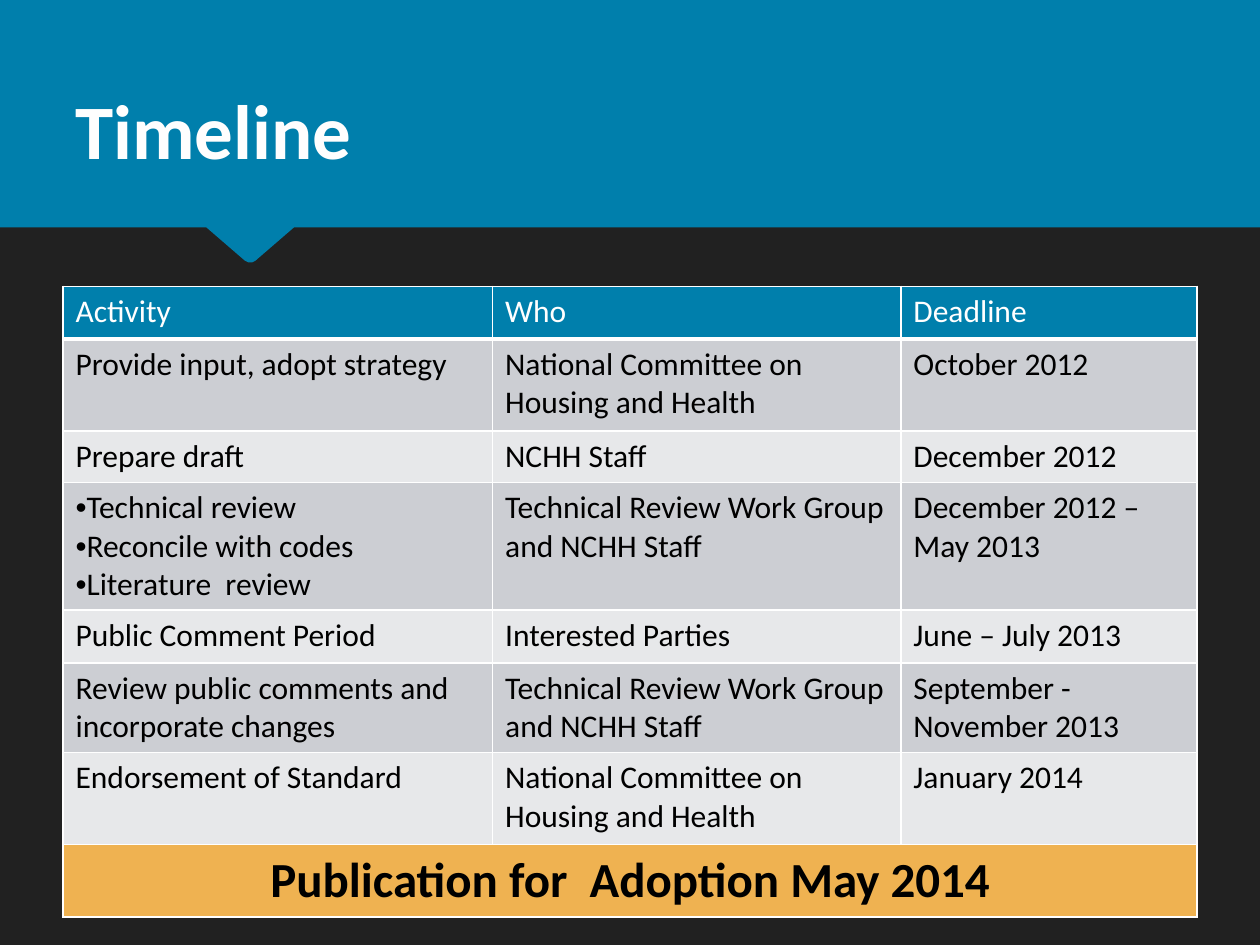
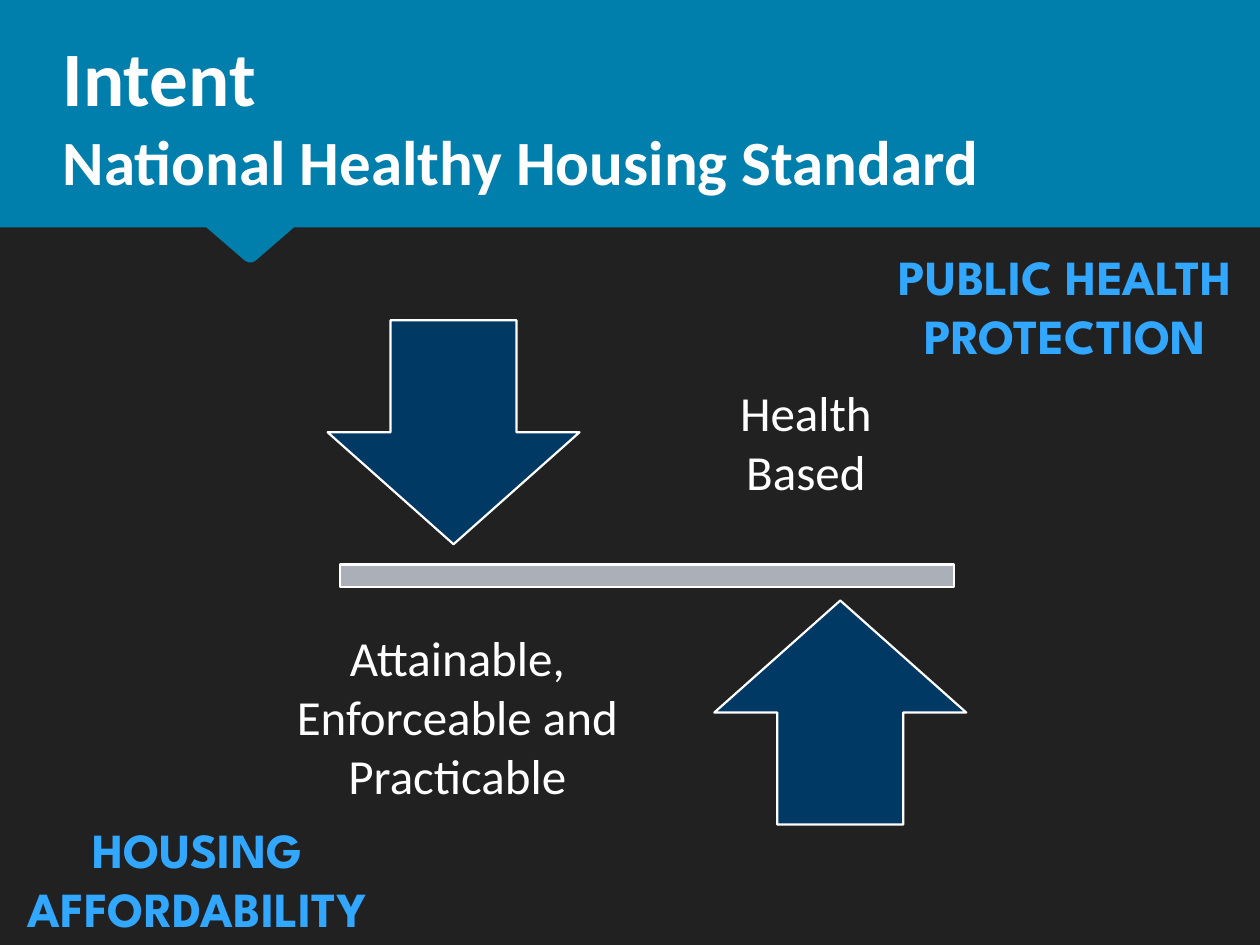
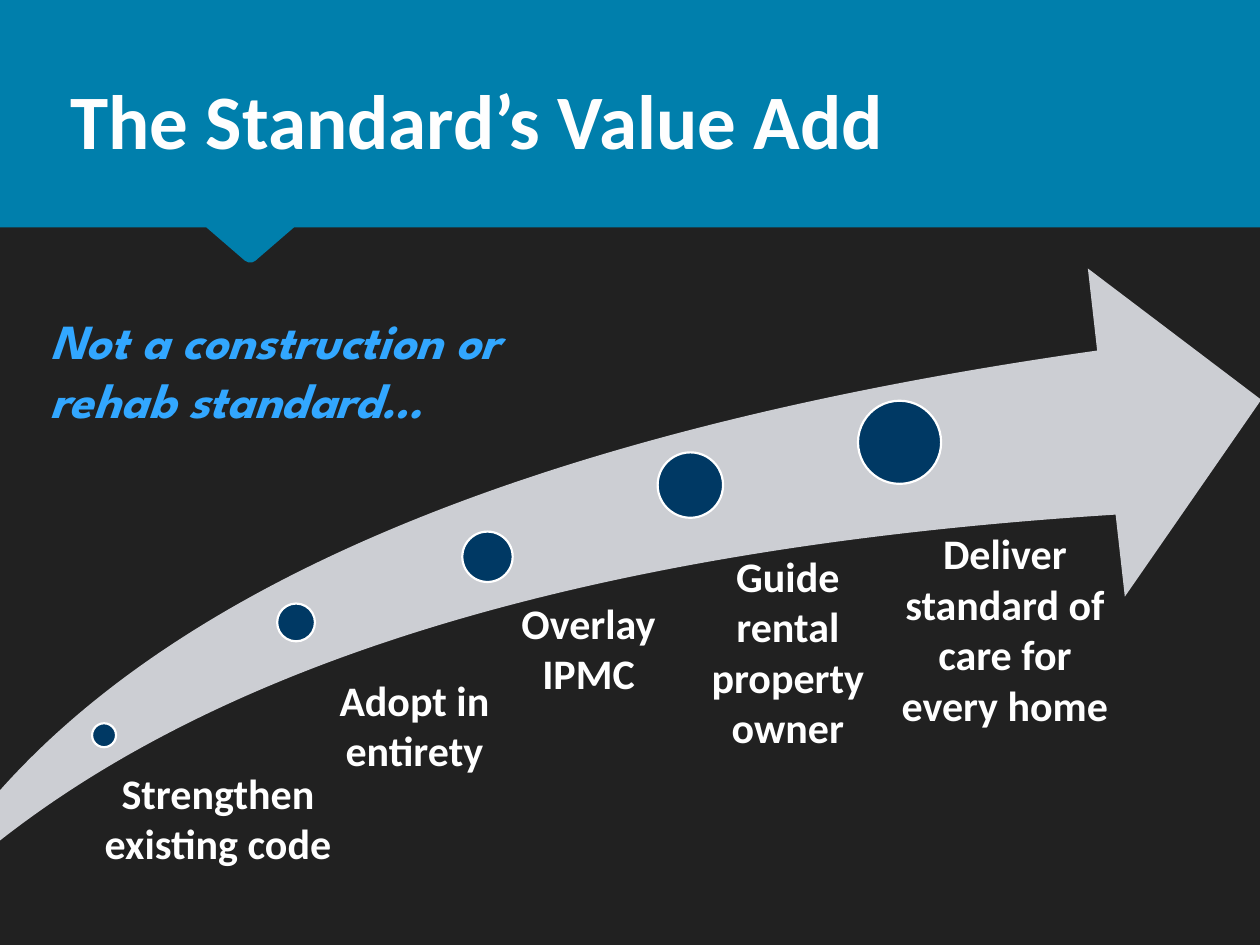
from typing import NamedTuple

from lxml import etree
from pptx import Presentation
from pptx.dml.color import RGBColor
from pptx.enum import shapes, text
from pptx.oxml import ns
from pptx.util import Pt

HUES = {
    "back": "212121", "band": "007FAC", "title": "FEFEFE", "white": "FFFFFF",
    "black": "000000", "navy": "003964", "bar": "ABAFB8", "sky": "32A7FF",
    "dark": "CCCED3", "light": "E7E8EA", "gold": "EFB251",
}
BODY, LOUD = "Calibri", "League Spartan"
FORM, ALIGN, ANCHOR = shapes.MSO_SHAPE, text.PP_ALIGN, text.MSO_ANCHOR
WIDE, HIGH, EDGE = 720, 540, 129.6


class Box(NamedTuple):
    left: float
    top: float
    wide: float
    high: float

    def place(self) -> tuple:
        return tuple(Pt(side) for side in self)


class Style(NamedTuple):
    size: float
    hue: str = "white"
    face: str = BODY
    bold: bool = False
    slant: bool = False
    align: ALIGN = ALIGN.CENTER
    anchor: ANCHOR = ANCHOR.TOP
    inset: tuple = (7.2, 3.6, 7.2, 3.6)


class Mark(NamedTuple):
    form: FORM
    box: Box
    fill: str
    line: bool = True
    bends: tuple = ()


class Stage(NamedTuple):
    words: str
    left: float
    top: float
    size: float
    label: Box


class Line(NamedTuple):
    cells: tuple
    high: float


def tint(hue: str) -> RGBColor:
    return RGBColor.from_string(HUES[hue])


def node(parent, tag: str, **attrs):
    return etree.SubElement(parent, ns.qn(tag), attrs)


# Shared parts
def set_text(frame, words: str, style: Style) -> None:
    frame.text = words
    for para in frame.paragraphs:
        para.alignment = style.align
        for run in para.runs:
            font = run.font
            font.size, font.name = Pt(style.size), style.face
            font.bold, font.italic = style.bold, style.slant
            font.color.rgb = tint(style.hue)


def add_text(slide, words: str, box: Box, style: Style):
    frame = slide.shapes.add_textbox(*box.place()).text_frame
    frame.word_wrap = True
    frame.vertical_anchor = style.anchor
    (frame.margin_left, frame.margin_top,
     frame.margin_right, frame.margin_bottom) = map(Pt, style.inset)
    set_text(frame, words, style)
    return frame


def paint(shape, fill: str, line: bool) -> None:
    shape.shadow.inherit = False
    shape.fill.solid()
    shape.fill.fore_color.rgb = tint(fill)
    if line:
        shape.line.color.rgb = tint("white")
        shape.line.width = Pt(1.25)
    else:
        shape.line.fill.background()


def add_mark(slide, mark: Mark) -> None:
    shape = slide.shapes.add_shape(mark.form, *mark.box.place())
    for spot, bend in enumerate(mark.bends):
        shape.adjustments[spot] = bend
    paint(shape, mark.fill, mark.line)


def add_band(slide) -> None:
    pen = slide.shapes.build_freeform(WIDE, 0, scale=Pt(1))
    pen.add_line_segments([
        (0, 0), (0, EDGE), (118, EDGE), (140.4, 149), (141.5, 149.6),
        (142.9, 149.9), (144.4, 149.6), (145.6, 149), (168.2, EDGE),
        (WIDE, EDGE),
    ])
    paint(pen.convert_to_shape(), "band", False)


def add_shade(run) -> None:
    fill = run.font.fill._xPr.find(ns.qn("a:solidFill"))
    glow = etree.Element(ns.qn("a:effectLst"))
    cast = node(glow, "a:outerShdw", blurRad="50800", dist="38100",
                dir="2700000", algn="tl")
    shade = node(cast, "a:srgbClr", val=HUES["black"])
    node(shade, "a:alpha", val="45000")
    fill.addnext(glow)


def new_slide(deck, title: str, box: Box, sizes: tuple = (44,)):
    slide = deck.slides.add_slide(deck.slide_layouts[6])
    slide.background.fill.solid()
    slide.background.fill.fore_color.rgb = tint("back")
    add_band(slide)
    style = Style(44, "title", bold=True, align=ALIGN.LEFT, anchor=ANCHOR.BOTTOM)
    frame = add_text(slide, title, box, style)
    for run, size in zip(frame.paragraphs[0].runs, sizes):
        run.font.size = Pt(size)
        add_shade(run)
    return slide


# Table parts
def set_cell(cell, words: str, fill: str, style: Style, base: float = 1) -> None:
    set_text(cell.text_frame, words, style)
    cell.fill.solid()
    cell.fill.fore_color.rgb = tint(fill)
    props = cell._tc.get_or_add_tcPr()
    widths = {"a:lnL": 1, "a:lnR": 1, "a:lnT": 1, "a:lnB": base}
    for spot, (tag, width) in enumerate(widths.items()):
        line = etree.Element(ns.qn(tag), w=str(Pt(width)))
        node(node(line, "a:solidFill"), "a:srgbClr", val=HUES["white"])
        props.insert(spot, line)


def add_dots(cell) -> None:
    for para in cell.text_frame.paragraphs:
        props = para._p.get_or_add_pPr()
        node(props, "a:buFont", typeface="Arial")
        node(props, "a:buChar", char="•")


# Slides
GROUP = "Technical Review Work Group and NCHH Staff"
BOARD = "National Committee on Housing and Health"
LINES = [
    Line(("Activity", "Who", "Deadline"), 30.24),
    Line(("Provide input, adopt strategy", BOARD, "October 2012"), 52.56),
    Line(("Prepare draft", "NCHH Staff", "December 2012"), 29.3),
    Line(("Technical review\nReconcile with codes\nLiterature  review", GROUP,
          "December 2012 – May 2013"), 73),
    Line(("Public Comment Period", "Interested Parties", "June – July 2013"), 30.24),
    Line(("Review public comments and incorporate changes", GROUP,
          "September - November 2013"), 51.2),
    Line(("Endorsement of Standard", BOARD, "January 2014"), 52.56),
    Line(("Publication for  Adoption May 2014", "", ""), 41.4),
]


def timeline(deck) -> None:
    slide = new_slide(deck, "Timeline", Box(36, 54, 648, 49.7))
    cols = (245.5, 233.3, 169.2)
    box = Box(36, 163.6, sum(cols), sum(line.high for line in LINES))
    table = slide.shapes.add_table(len(LINES), len(cols), *box.place()).table
    table.first_row = table.horz_banding = False
    for col, wide in zip(table.columns, cols):
        col.width = Pt(wide)
    last = len(LINES) - 1
    plain = Style(18, "black", align=ALIGN.LEFT)
    for row, line in enumerate(LINES):
        table.rows[row].height = Pt(line.high)
        fill, style, base = ("dark" if row % 2 else "light"), plain, 1
        if row == 0:
            fill, style, base = "band", plain._replace(hue="white"), 3
        elif row == last:
            fill, style = "gold", Style(28, "black", bold=True)
        for col, words in enumerate(line.cells):
            set_cell(table.cell(row, col), words, fill, style, base)
    add_dots(table.cell(3, 0))
    table.cell(last, 0).merge(table.cell(last, len(cols) - 1))


def intent(deck) -> None:
    slide = new_slide(deck, "Intent\vNational Healthy Housing Standard",
                      Box(28.8, 40.3, 627.8, 76.3), (44, 36))
    # Balance bar and arrows
    for mark in (
        Mark(FORM.MATH_MINUS, Box(131, 301.7, 477.4, 54.7), "bar"),
        Mark(FORM.DOWN_ARROW, Box(187.2, 183, 144, 128), "navy"),
        Mark(FORM.UP_ARROW, Box(408.2, 343.2, 144, 128), "navy"),
    ):
        add_mark(slide, mark)
    # Labels
    label = Style(28, inset=(15.84,) * 4, anchor=ANCHOR.MIDDLE)
    add_text(slide, "Health\nBased", Box(383.8, 167, 153.4, 134.6),
             label._replace(anchor=ANCHOR.BOTTOM))
    add_text(slide, "Attainable, Enforceable and Practicable",
             Box(148.3, 342, 226, 134.6), label)
    loud = Style(28, "sky", LOUD, bold=True)
    add_text(slide, "HOUSING AFFORDABILITY", Box(0, 465, 225.4, 75), loud)
    add_text(slide, "PUBLIC HEALTH PROTECTION", Box(497.5, 137.5, 222.5, 75), loud)


STAGES = [
    Stage("Strengthen existing code", 52.6, 413.3, 13.7, Box(33.1, 438.5, 175.7, 64.8)),
    Stage("Adopt in entirety", 158.4, 344.9, 21.6, Box(152.6, 385.2, 157, 100.8)),
    Stage("Overlay IPMC", 264.2, 303.8, 28.8, Box(270.7, 341.3, 115.9, 161.3)),
    Stage("Guide rental property owner", 375.8, 258.5, 37.4,
          Box(380.2, 314.6, 120.2, 187.2)),
    Stage("Deliver standard of care for every home", 490.3, 229, 47.5,
          Box(488.2, 301.7, 146.9, 182.9)),
]


def value(deck) -> None:
    slide = new_slide(deck, "The Standard’s Value Add", Box(33.1, 21.6, 627.8, 76.3))
    add_mark(slide, Mark(FORM.SWOOSH_ARROW, Box(-53.3, 153.4, 774, 375.1),
                         "dark", False, (0.25, 0.25)))
    for stage in STAGES:
        dot = Box(stage.left, stage.top, stage.size, stage.size)
        add_mark(slide, Mark(FORM.OVAL, dot, "navy"))
        # The label's left inset grows with its dot
        inset = (round(stage.size * 0.53, 2), 0, 0, 0)
        add_text(slide, stage.words, stage.label, Style(24, bold=True, inset=inset))
    add_text(slide, "Not a construction or rehab standard…",
             Box(21.6, 174.2, 296.6, 75),
             Style(28, "sky", LOUD, bold=True, slant=True, align=ALIGN.LEFT))


def main() -> None:
    deck = Presentation()
    deck.slide_width, deck.slide_height = Pt(WIDE), Pt(HIGH)
    for build in (timeline, intent, value):
        build(deck)
    deck.save("out.pptx")


if __name__ == "__main__":
    main()
